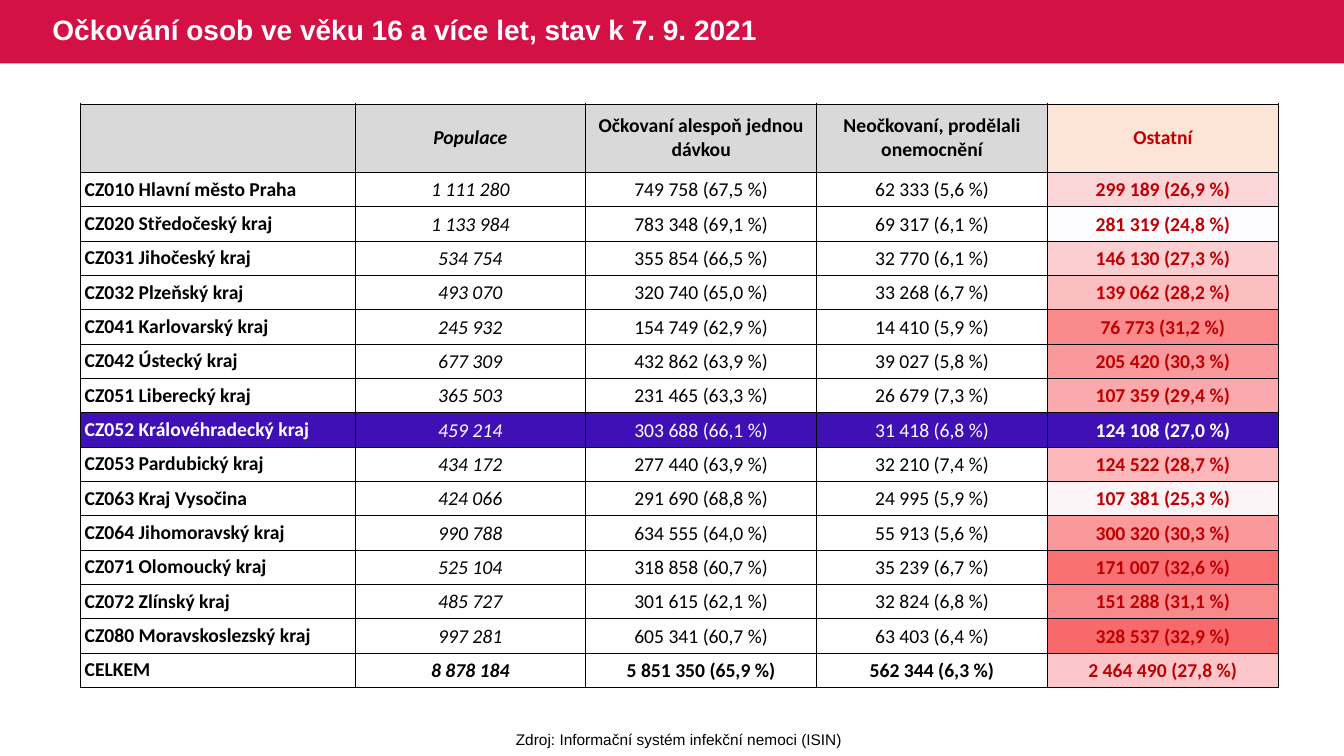
"""Build the slide on vaccination of people aged 16 and over by Czech region."""
from lxml import etree
from pptx import Presentation
from pptx.dml.color import RGBColor
from pptx.enum import shapes, text
from pptx.oxml import ns
from pptx.util import Inches, Pt

CRIMSON = RGBColor(0xD3, 0x11, 0x45)
WHITE = RGBColor(0xFF, 0xFF, 0xFF)
BLACK = RGBColor(0, 0, 0)
GREY = RGBColor(0xD9, 0xD9, 0xD9)
PEACH = RGBColor(0xFC, 0xE4, 0xD6)
DARK_RED = RGBColor(0xC0, 0, 0)
VIOLET = RGBColor(0x40, 0x10, 0xB7)
NO_STYLE = "{2D5ABB26-0587-4C30-8999-92F81FD0307C}"

HEADINGS = ("", "Populace", "Očkovaní alespoň jednou dávkou",
            "Neočkovaní, prodělali onemocnění", "Ostatní")
REGIONS = [
    ("CZ010 Hlavní město Praha", "1 111 280", "749 758 (67,5 %)", "62 333 (5,6 %)", "299 189 (26,9 %)"),
    ("CZ020 Středočeský kraj", "1 133 984", "783 348 (69,1 %)", "69 317 (6,1 %)", "281 319 (24,8 %)"),
    ("CZ031 Jihočeský kraj", "534 754", "355 854 (66,5 %)", "32 770 (6,1 %)", "146 130 (27,3 %)"),
    ("CZ032 Plzeňský kraj", "493 070", "320 740 (65,0 %)", "33 268 (6,7 %)", "139 062 (28,2 %)"),
    ("CZ041 Karlovarský kraj", "245 932", "154 749 (62,9 %)", "14 410 (5,9 %)", "76 773 (31,2 %)"),
    ("CZ042 Ústecký kraj", "677 309", "432 862 (63,9 %)", "39 027 (5,8 %)", "205 420 (30,3 %)"),
    ("CZ051 Liberecký kraj", "365 503", "231 465 (63,3 %)", "26 679 (7,3 %)", "107 359 (29,4 %)"),
    ("CZ052 Královéhradecký kraj", "459 214", "303 688 (66,1 %)", "31 418 (6,8 %)", "124 108 (27,0 %)"),
    ("CZ053 Pardubický kraj", "434 172", "277 440 (63,9 %)", "32 210 (7,4 %)", "124 522 (28,7 %)"),
    ("CZ063 Kraj Vysočina", "424 066", "291 690 (68,8 %)", "24 995 (5,9 %)", "107 381 (25,3 %)"),
    ("CZ064 Jihomoravský kraj", "990 788", "634 555 (64,0 %)", "55 913 (5,6 %)", "300 320 (30,3 %)"),
    ("CZ071 Olomoucký kraj", "525 104", "318 858 (60,7 %)", "35 239 (6,7 %)", "171 007 (32,6 %)"),
    ("CZ072 Zlínský kraj", "485 727", "301 615 (62,1 %)", "32 824 (6,8 %)", "151 288 (31,1 %)"),
    ("CZ080 Moravskoslezský kraj", "997 281", "605 341 (60,7 %)", "63 403 (6,4 %)", "328 537 (32,9 %)"),
    ("CELKEM", "8 878 184", "5 851 350 (65,9 %)", "562 344 (6,3 %)", "2 464 490 (27,8 %)"),
]
HEAT = ("FBD6D9 FCFCFF FBCFD2 FBBFC2 F9898B FA999B FAAAAC FBD4D7 "
        "FBB7B9 FCF3F6 FA999B F97072 F98A8C F8696B FBC7CA").split()
HIGHLIGHTED = 8
TOTAL = len(REGIONS)
NAME_WIDTH, VALUE_WIDTH = Inches(2.72), Inches(2.29)
LEFT, TOP, HEADER_HEIGHT = Inches(0.8), Inches(1.03), Inches(0.68)
BODY_HEIGHT = Inches(5.11)


def add_plain_table(rows, columns, left, top, width, height):
    frame = slide.shapes.add_table(rows, columns, left, top, width, height)
    frame.table.first_row = frame.table.horz_banding = False
    frame.element.find(".//" + ns.qn("a:tableStyleId")).text = NO_STYLE
    return frame.table


def add_borders(cell):
    properties = cell._tc.get_or_add_tcPr()
    for position, side in enumerate(("lnL", "lnR", "lnT", "lnB")):
        border = etree.Element(ns.qn("a:" + side), w=str(Pt(0.5)))
        fill = etree.SubElement(border, ns.qn("a:solidFill"))
        etree.SubElement(fill, ns.qn("a:srgbClr"), val=str(BLACK))
        properties.insert(position, border)


prs = Presentation()
prs.slide_width, prs.slide_height = Inches(13.33), Inches(7.5)
slide = prs.slides.add_slide(prs.slide_layouts[5])

title = slide.shapes.title
title.left, title.top, title.width, title.height = Inches(0.42), 0, Inches(8.28), Inches(0.63)
title.text_frame.vertical_anchor = text.MSO_ANCHOR.MIDDLE
title.text_frame.word_wrap = True
heading = title.text_frame.paragraphs[0]
heading.alignment = text.PP_ALIGN.LEFT
heading.line_spacing = 0.9
heading_run = heading.add_run()
heading_run.text = "Očkování osob ve věku 16 a více let, stav k 7. 9. 2021"
heading_run.font.name, heading_run.font.size, heading_run.font.bold = "Arial", Pt(20), True
heading_run.font.color.rgb = WHITE

banner = slide.shapes.add_shape(shapes.MSO_SHAPE.RECTANGLE, 0, 0, prs.slide_width, Inches(0.63))
banner.shadow.inherit = False
banner.fill.solid()
banner.fill.fore_color.rgb = CRIMSON
banner.line.fill.background()
title.element.addprevious(banner.element)

heat_scale = add_plain_table(TOTAL, 1, LEFT + NAME_WIDTH + 3 * VALUE_WIDTH, TOP + HEADER_HEIGHT,
                             VALUE_WIDTH, BODY_HEIGHT)
for shade, cell in zip(HEAT, heat_scale.iter_cells()):
    cell.margin_top = cell.margin_bottom = 0
    cell.fill.solid()
    cell.fill.fore_color.rgb = RGBColor.from_string(shade)

vaccination = add_plain_table(TOTAL + 1, len(HEADINGS), LEFT, TOP, NAME_WIDTH + 4 * VALUE_WIDTH,
                              HEADER_HEIGHT + BODY_HEIGHT)
for index, column in enumerate(vaccination.columns):
    column.width = VALUE_WIDTH if index else NAME_WIDTH
for index, row in enumerate(vaccination.rows):
    row.height = BODY_HEIGHT // TOTAL if index else HEADER_HEIGHT

for r, values in enumerate([HEADINGS, *REGIONS]):
    for c, value in enumerate(values):
        cell = vaccination.cell(r, c)
        others = c == len(HEADINGS) - 1
        cell.vertical_anchor = text.MSO_ANCHOR.MIDDLE
        cell.margin_left = cell.margin_right = Inches(0.01 if r and c else 0.04)
        cell.margin_top = Inches(0.01 if r and c else 0)
        cell.margin_bottom = 0
        if r in (0, HIGHLIGHTED):
            cell.fill.solid()
            cell.fill.fore_color.rgb = VIOLET if r else PEACH if others else GREY
        else:
            cell.fill.background()
        add_borders(cell)
        if value:
            paragraph = cell.text_frame.paragraphs[0]
            paragraph.alignment = text.PP_ALIGN.CENTER if c else text.PP_ALIGN.LEFT
            run = paragraph.add_run()
            run.text = value
            run.font.name, run.font.size = "Calibri", Pt(14)
            run.font.bold = r in (0, TOTAL) or c == 0 or others
            run.font.italic = c == 1
            run.font.color.rgb = WHITE if r == HIGHLIGHTED else DARK_RED if others else BLACK

source = slide.shapes.add_textbox(Inches(5.01), Inches(7.19), Inches(3.45), Inches(0.29))
source.text_frame.word_wrap = False
source.text_frame.auto_size = text.MSO_AUTO_SIZE.SHAPE_TO_FIT_TEXT
credit = source.text_frame.paragraphs[0]
credit.alignment = text.PP_ALIGN.CENTER
credit_run = credit.add_run()
credit_run.text = "Zdroj: Informační systém infekční nemoci (ISIN)"
credit_run.font.name, credit_run.font.size = "Arial", Pt(11)
credit_run.font.color.rgb = BLACK

prs.save("out.pptx")
